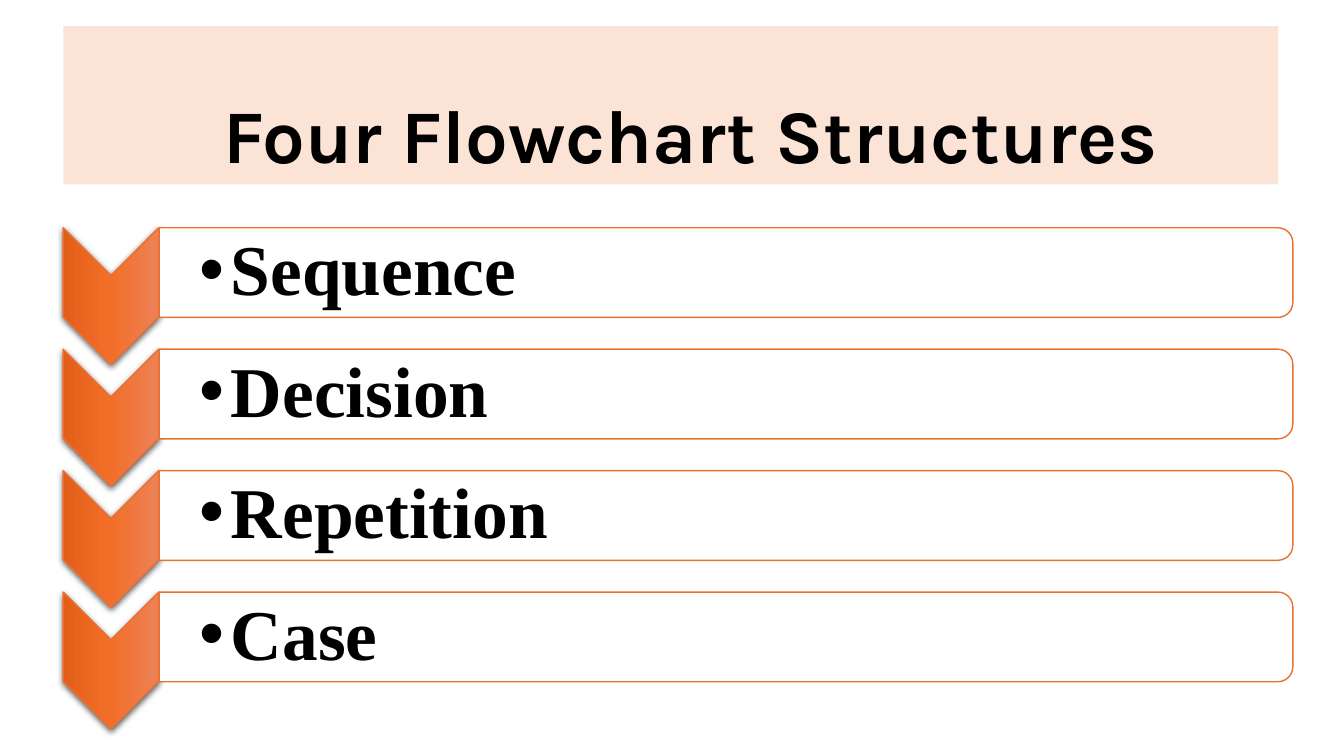
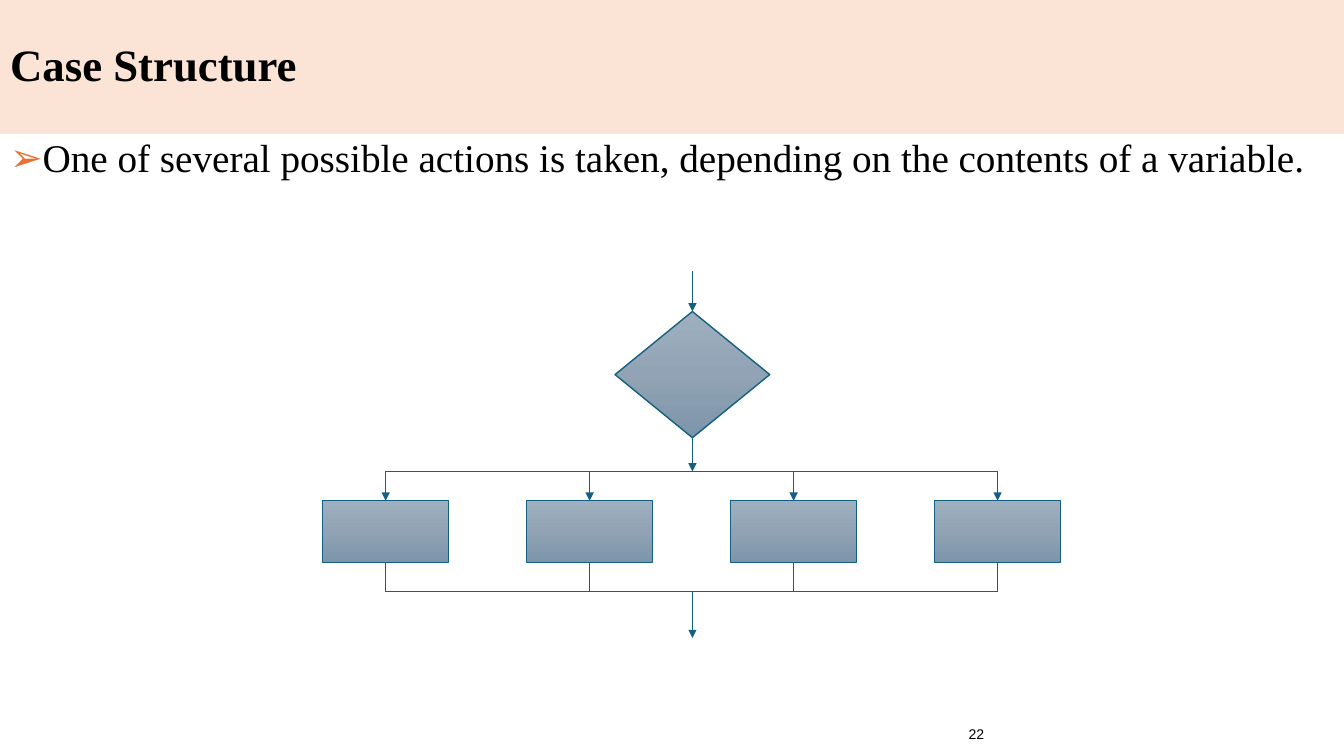
from lxml.etree import SubElement
from pptx import Presentation
from pptx.dml.color import RGBColor
from pptx.enum.shapes import MSO_CONNECTOR, MSO_SHAPE
from pptx.enum.text import MSO_ANCHOR, MSO_AUTO_SIZE, PP_ALIGN
from pptx.oxml import parse_xml
from pptx.oxml.ns import nsdecls, qn
from pptx.util import Cm, Pt

BLACK, WHITE, BAND = "000000", "FFFFFF", "FBE3D6"
ORANGE, TEAL = "E97132", "156082"
ORANGE_FADE = ["ED8257", "F26E29", "E25F1A"]
SLATE_FADE = ["9EAFBF", "91A3B4", "7C95AB"]
SERIF = "Times New Roman"
TOP, BOTTOM = 0, 2

STRUCTURES = ["Sequence", "Decision", "Repetition", "Case"]
CASE_TEXT = "One of several possible actions is taken, depending on the contents of a variable."
PAGE_NUMBER = "22"

ROW_TOP, ROW_PITCH = 5.87, 3.06
ROW_LEFT, ROW_WIDTH, ROW_HEIGHT = 4.01, 28.57, 2.26
CHEVRON_LEFT, CHEVRON_WIDTH, CHEVRON_HEIGHT = 1.59, 2.41, 3.45

ACTION_COUNT, ACTION_LEFT, ACTION_PITCH = 4, 8.13, 5.14
ACTION_TOP, ACTION_WIDTH, ACTION_HEIGHT = 12.62, 3.18, 1.55
DECISION = (15.5, 7.85, 3.9, 3.18)
ENTRY_Y, SPLIT_Y, MERGE_Y, EXIT_Y = 6.83, 11.88, 14.91, 16.08


def color(value):
    return RGBColor.from_string(value)


def write(shape, text, size, font=SERIF, bold=False, align=PP_ALIGN.LEFT,
          anchor=MSO_ANCHOR.TOP, spacing=0.9, before=0, left_inset=None,
          indent=0, hanging=0, bullet=None, bullet_color=BLACK):
    frame = shape.text_frame
    frame.word_wrap = True
    frame.auto_size = MSO_AUTO_SIZE.NONE
    frame.vertical_anchor = anchor
    if left_inset is not None:
        frame.margin_left = Cm(left_inset)
        frame.margin_top = frame.margin_right = frame.margin_bottom = Cm(0.1)
    para = frame.paragraphs[0]
    para.alignment = align
    para.line_spacing = spacing
    para.space_before = Pt(before)
    span = para.add_run()
    span.text = text
    span.font.name = font
    span.font.size = Pt(size)
    span.font.bold = bold
    span.font.color.rgb = color(BLACK)
    properties = para._p.get_or_add_pPr()
    properties.set("marL", str(Cm(indent)))
    properties.set("indent", str(Cm(-hanging)))
    if bullet:
        tint = SubElement(properties, qn("a:buClr"))
        SubElement(tint, qn("a:srgbClr"), val=bullet_color)
        SubElement(properties, qn("a:buFont"), typeface="Arial")
        SubElement(properties, qn("a:buChar"), char=bullet)


def add_text(page, place, text, size, **style):
    box = page.shapes.add_textbox(*map(Cm, place))
    write(box, text, size, **style)


def add_titled_page(deck, place, text, size, **style):
    page = deck.slides.add_slide(deck.slide_layouts[5])
    title = page.shapes.title
    title.left, title.top, title.width, title.height = map(Cm, place)
    title.fill.solid()
    title.fill.fore_color.rgb = color(BAND)
    write(title, text, size, bold=True, **style)
    return page


def add_block(page, kind, place, line, fill=None, fade=None, turned=False):
    left, top, width, height = place
    if turned:
        left, top = left + (width - height) / 2, top + (height - width) / 2
        width, height = height, width
    block = page.shapes.add_shape(kind, Cm(left), Cm(top), Cm(width), Cm(height))
    block.rotation = 90 if turned else 0
    block.shadow.inherit = False
    block.line.color.rgb = color(line)
    block.line.width = Pt(1)
    if fade:
        stops = "".join(
            f'<a:gs pos="{position * 50000}"><a:srgbClr val="{tone}"/></a:gs>'
            for position, tone in enumerate(fade))
        gradient = parse_xml(
            f'<a:gradFill {nsdecls("a")} rotWithShape="1"><a:gsLst>{stops}</a:gsLst>'
            '<a:lin ang="5400000" scaled="0"/></a:gradFill>')
        block._element.spPr.find(qn("a:prstGeom")).addnext(gradient)
    else:
        block.fill.solid()
        block.fill.fore_color.rgb = color(fill)
    return block


def add_shadow(block):
    effects = block._element.spPr.find(qn("a:effectLst"))
    shadow = SubElement(effects, qn("a:outerShdw"), blurRad="57150", dist="19050",
                        dir="5400000", algn="ctr", rotWithShape="0")
    tone = SubElement(shadow, qn("a:srgbClr"), val=BLACK)
    SubElement(tone, qn("a:alpha"), val="63000")


def add_line(page, start, finish, arrow=False, begin=None, end=None):
    line = page.shapes.add_connector(
        MSO_CONNECTOR.STRAIGHT, *map(Cm, start), *map(Cm, finish))
    if begin:
        line.begin_connect(*begin)
    if end:
        line.end_connect(*end)
    line.line.color.rgb = color(TEAL)
    line.line.width = Pt(1)
    if arrow:
        SubElement(line.line._get_or_add_ln(), qn("a:tailEnd"), type="triangle")
    SubElement(line._element.spPr, qn("a:effectLst"))


def build_structures(deck):
    page = add_titled_page(deck, (1.6, 0.66, 30.61, 3.99), "Four Flowchart Structures",
                           54, font="Karla", anchor=MSO_ANCHOR.BOTTOM, indent=3.78)
    for index, name in enumerate(STRUCTURES):
        top = ROW_TOP + index * ROW_PITCH - 0.13
        chevron = add_block(page, MSO_SHAPE.CHEVRON,
                            (CHEVRON_LEFT, top, CHEVRON_WIDTH, CHEVRON_HEIGHT),
                            ORANGE, fade=ORANGE_FADE, turned=True)
        add_shadow(chevron)
        row = (ROW_LEFT, top, ROW_WIDTH, ROW_HEIGHT)
        add_block(page, MSO_SHAPE.ROUND_2_SAME_RECTANGLE, row, ORANGE,
                  fill=WHITE, turned=True)
        add_text(page, row, name, 51, bold=True, anchor=MSO_ANCHOR.MIDDLE,
                 left_inset=1.02, indent=0.79, hanging=0.79, bullet="•")


def build_case(deck):
    page = add_titled_page(deck, (0, 0, 33.87, 3.38), "Case Structure", 32,
                           anchor=MSO_ANCHOR.MIDDLE)
    add_text(page, (0, 3.38, 33.87, 15.67), CASE_TEXT, 28, before=10, indent=0.64,
             hanging=0.64, bullet="➢", bullet_color=ORANGE)
    add_text(page, (24.03, 17.81, 1.02, 1.02), PAGE_NUMBER, 10, font="Arial",
             align=PP_ALIGN.RIGHT, anchor=MSO_ANCHOR.BOTTOM, spacing=1)

    decision = add_block(page, MSO_SHAPE.FLOWCHART_DECISION, DECISION, TEAL, fade=SLATE_FADE)
    left, top, width, height = DECISION
    middle = left + width / 2
    add_line(page, (middle, ENTRY_Y), (middle, top), arrow=True, end=(decision, TOP))
    add_line(page, (middle, top + height), (middle, SPLIT_Y), arrow=True,
             begin=(decision, BOTTOM))

    lefts = [ACTION_LEFT + index * ACTION_PITCH for index in range(ACTION_COUNT)]
    centers = [left + ACTION_WIDTH / 2 for left in lefts]
    for left, center in zip(lefts, centers):
        action = add_block(page, MSO_SHAPE.RECTANGLE,
                           (left, ACTION_TOP, ACTION_WIDTH, ACTION_HEIGHT),
                           TEAL, fade=SLATE_FADE)
        add_line(page, (center, SPLIT_Y), (center, ACTION_TOP), arrow=True,
                 end=(action, TOP))
        add_line(page, (center, ACTION_TOP + ACTION_HEIGHT), (center, MERGE_Y),
                 begin=(action, BOTTOM))
    for rail in (SPLIT_Y, MERGE_Y):
        add_line(page, (centers[0], rail), (centers[-1], rail))
    add_line(page, (middle, MERGE_Y), (middle, EXIT_Y), arrow=True)


def main():
    deck = Presentation()
    deck.slide_width, deck.slide_height = Cm(33.87), Cm(19.05)
    build_structures(deck)
    build_case(deck)
    deck.save("out.pptx")


if __name__ == "__main__":
    main()
